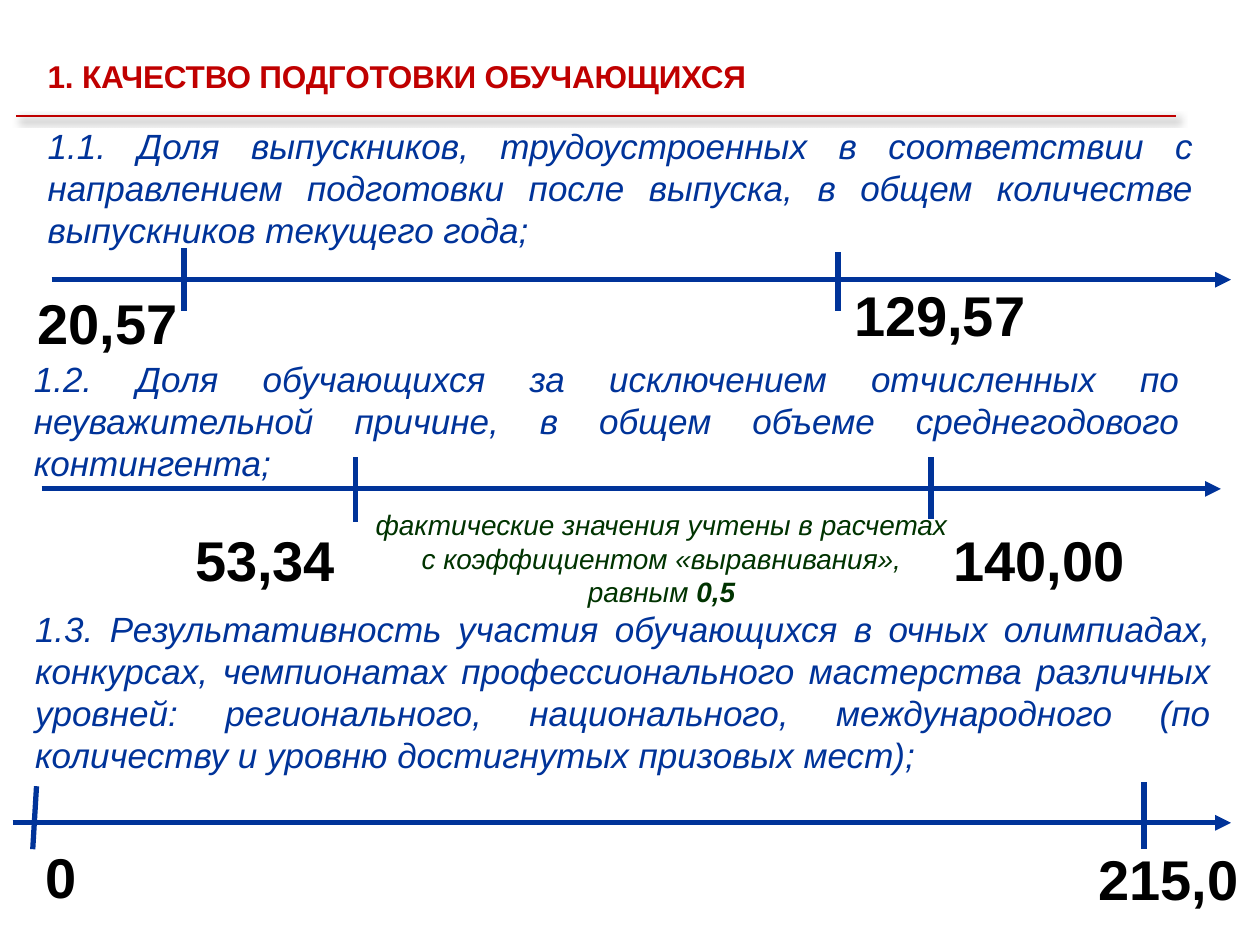
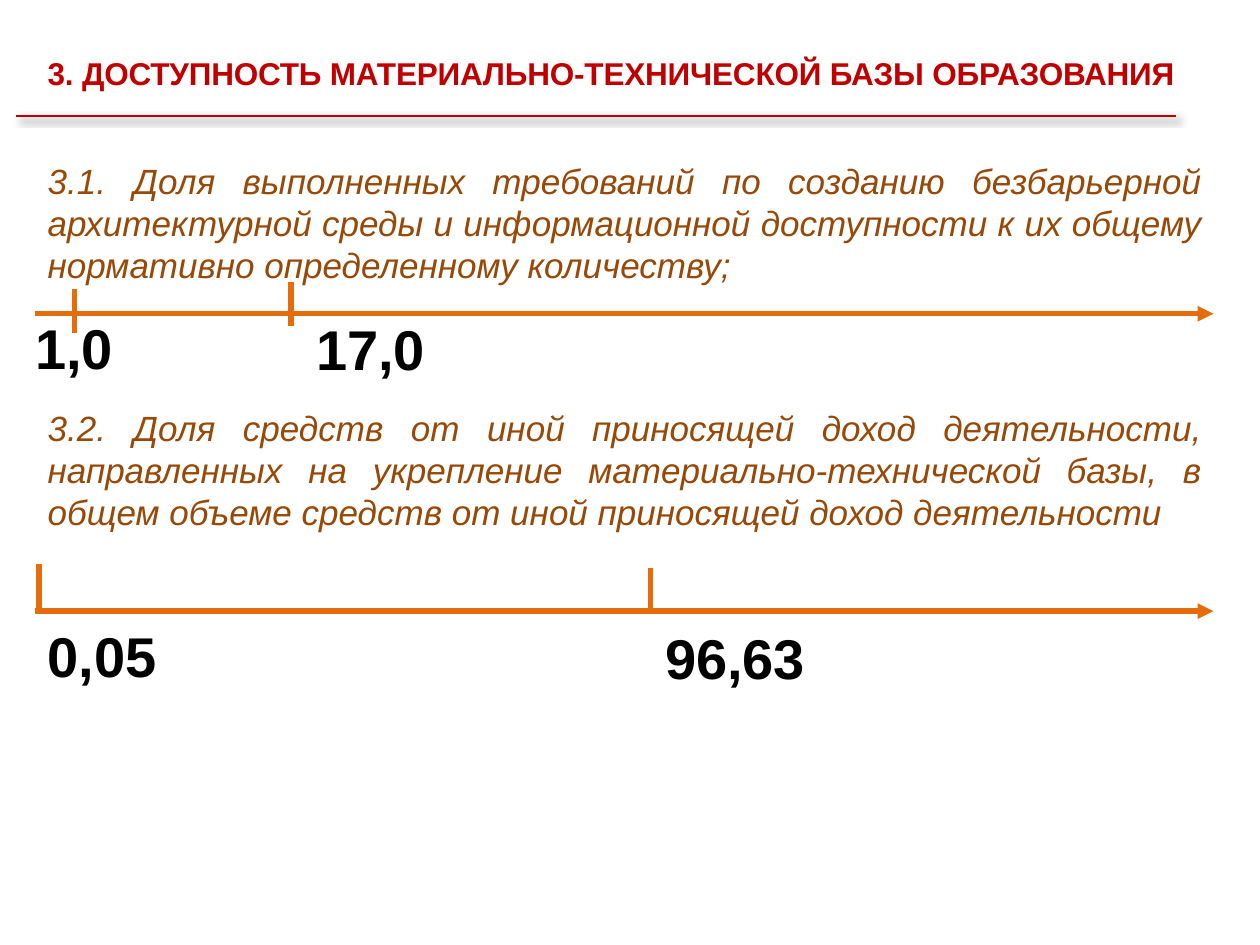
from dataclasses import dataclass

from lxml.etree import SubElement
from pptx import Presentation
from pptx.dml.color import RGBColor
from pptx.enum.shapes import MSO_CONNECTOR
from pptx.enum.text import MSO_AUTO_SIZE, PP_ALIGN
from pptx.oxml.ns import qn
from pptx.util import Inches, Pt

COLORS = {
    "title": "C00000",
    "blue": "003399",
    "brown": "984807",
    "orange": "E46C0A",
    "green": "003300",
    "number": "000000",
    "shadow": "000000",
}
FONT = "Arial"
COLUMNS, ROWS = 100, 75
SLIDE_WIDTH, SLIDE_HEIGHT = Inches(10), Inches(7.5)
STATEMENT_LINE = 3.33
NUMBER_HEIGHT = 6.4
DIGIT_WIDTH, COMMA_WIDTH, TEXT_INSETS = 2.47, 1.24, 2


@dataclass
class Box:
    """A region measured in grid columns and rows."""
    left: float
    top: float
    width: float
    height: float

    def inner(self, left, top, width, height):
        """Return a box placed relative to this one."""
        return Box(self.left + left, self.top + top, width, height)


@dataclass
class Mark:
    """A tick on an axis and the number beside it, relative to the scale."""
    tick: tuple
    number: str
    number_at: tuple
    lean: float = 0


@dataclass
class Scale:
    """A statement above an arrow axis with two marks."""
    box: Box
    statement: str
    indent: float
    width: float
    lines: int
    axis_row: float
    marks: tuple


def across(columns):
    """Convert grid columns to a slide length."""
    return int(SLIDE_WIDTH * columns / COLUMNS)


def down(rows):
    """Convert grid rows to a slide length."""
    return int(SLIDE_HEIGHT * rows / ROWS)


def add_text(page, box, runs, size, color, align=PP_ALIGN.LEFT,
             italic=False, wrap=True, spacing=None):
    """Add a text box from (text, bold) runs."""
    shape = page.shapes.add_textbox(across(box.left), down(box.top),
                                    across(box.width), down(box.height))
    frame = shape.text_frame
    frame.word_wrap = wrap
    frame.auto_size = MSO_AUTO_SIZE.SHAPE_TO_FIT_TEXT
    para = frame.paragraphs[0]
    para.alignment = align
    for text, bold in runs:
        span = para.add_run()
        span.text = text
        span.font.name = FONT
        span.font.size = Pt(size)
        span.font.bold = bold
        span.font.italic = italic
        span.font.color.rgb = RGBColor.from_string(COLORS[color])
        if spacing is not None:
            span._r.get_or_add_rPr().set("spc", str(round(spacing * 100)))


def add_line(page, start, end, color, weight=3, arrow=False):
    """Add a straight line and return its empty effect list."""
    line = page.shapes.add_connector(
        MSO_CONNECTOR.STRAIGHT, across(start[0]), down(start[1]),
        across(end[0]), down(end[1]))
    line.line.color.rgb = RGBColor.from_string(COLORS[color])
    line.line.width = Pt(weight)
    if arrow:
        SubElement(line.line._get_or_add_ln(), qn("a:tailEnd"), type="triangle")
    return SubElement(line._element.spPr, qn("a:effectLst"))


def add_header(page, box, title, wrap=True):
    """Add the red title and the shadowed rule under it."""
    add_text(page, box, [(title, True)], 18, "title", wrap=wrap, spacing=-0.1)
    effects = add_line(page, (1.3, 9.2), (93.3, 9.2), "title", 1.5)
    shadow = SubElement(effects, qn("a:outerShdw"), blurRad=str(Pt(4)),
                        dist=str(Pt(3)), dir=str(45 * 60000), rotWithShape="0")
    tint = SubElement(shadow, qn("a:srgbClr"), val=COLORS["shadow"])
    SubElement(tint, qn("a:alpha"), val="40000")


def add_mark(page, box, mark, color):
    """Add one tick and its number inside a scale's box."""
    column, top, bottom = mark.tick
    add_line(page, (box.left + column + mark.lean, box.top + top),
             (box.left + column, box.top + bottom), color)
    commas = mark.number.count(",")
    width = (TEXT_INSETS + commas * COMMA_WIDTH
             + (len(mark.number) - commas) * DIGIT_WIDTH)
    add_text(page, box.inner(*mark.number_at, width, NUMBER_HEIGHT),
             [(mark.number, True)], 32, "number", wrap=False)


def add_scale(page, scale, text_color, line_color):
    """Add a statement, its arrow axis and its marks."""
    box = scale.box
    height = 1 + scale.lines * STATEMENT_LINE
    add_text(page, box.inner(scale.indent, 0, scale.width, height),
             [(scale.statement, False)], 20, text_color,
             PP_ALIGN.JUSTIFY, italic=True)
    for mark in scale.marks:
        add_mark(page, box, mark, line_color)
    row = box.top + scale.axis_row
    add_line(page, (box.left, row), (box.left + box.width, row),
             line_color, arrow=True)


def add_note(page, box):
    """Add the green remark on the levelling coefficient."""
    add_text(page, box,
             [("фактические значения учтены в расчетах с коэффициентом "
               "«выравнивания», равным ", False), ("0,5", True)],
             16, "green", PP_ALIGN.CENTER, italic=True)


TRAINING_SCALES = (
    Scale(Box(4.1, 9.4, 93.6, 19.4),
          "1.1. Доля выпускников, трудоустроенных в соответствии с "
          "направлением подготовки после выпуска, в общем количестве "
          "выпускников текущего года;",
          -1.3, 92.9, 3, 12.8,
          (Mark((10.5, 10.3, 15.3), "20,57", (-2.1, 13)),
           Mark((62.4, 10.6, 15.3), "129,57", (62.7, 12.4)))),
    Scale(Box(3.3, 27.9, 93.6, 21),
          "1.2. Доля обучающихся за исключением отчисленных по "
          "неуважительной причине, в общем объеме среднегодового "
          "контингента;",
          -1.6, 92.9, 3, 10.9,
          (Mark((24.9, 8.4, 13.5), "53,34", (11.2, 13.3)),
           Mark((70.6, 8.4, 13.3), "140,00", (71.4, 13.3)))),
    Scale(Box(1, 47.7, 96.7, 25.2),
          "1.3. Результативность участия обучающихся в очных олимпиадах, "
          "конкурсах, чемпионатах профессионального мастерства различных "
          "уровней: регионального, национального, международного (по "
          "количеству и уровню достигнутых призовых мест);",
          0.8, 95.3, 4, 17.6,
          (Mark((1.6, 14.7, 19.7), "0", (1.6, 18.7), lean=0.3),
           Mark((89.8, 14.4, 19.7), "215,0", (85.2, 18.8)))),
)
ACCESS_SCALES = (
    Scale(Box(2.8, 12.2, 93.5, 18.7),
          "3.1. Доля выполненных требований по созданию безбарьерной "
          "архитектурной среды и информационной доступности к их общему "
          "нормативно определенному количеству;",
          0, 93.6, 3, 12.7,
          (Mark((3.1, 10.7, 14.2), "1,0", (-1, 12.2)),
           Mark((20.3, 10.2, 13.7), "17,0", (21.3, 12.3)))),
    Scale(Box(2.8, 31.8, 93.5, 23.6),
          "3.2. Доля средств от иной приносящей доход деятельности, "
          "направленных на укрепление материально-технической базы, в "
          "общем объеме средств от иной приносящей доход деятельности",
          0, 93.6, 3, 16.7,
          (Mark((0.3, 13, 16.7), "0,05", (0, 17)),
           Mark((48.8, 13.3, 16.7), "96,63", (49, 17.2)))),
)


def build_training(page):
    """Fill the slide on the quality of training."""
    add_header(page, Box(2.8, 4, 57.9, 4),
               "1. КАЧЕСТВО ПОДГОТОВКИ ОБУЧАЮЩИХСЯ", wrap=False)
    for scale in TRAINING_SCALES:
        add_scale(page, scale, "blue", "blue")
    add_note(page, TRAINING_SCALES[1].box.inner(24.9, 11.9, 48.6, 9.1))


def build_access(page):
    """Fill the slide on access to facilities."""
    add_header(page, Box(2.8, 3.8, 97.2, 4),
               "3. ДОСТУПНОСТЬ МАТЕРИАЛЬНО-ТЕХНИЧЕСКОЙ БАЗЫ ОБРАЗОВАНИЯ")
    for scale in ACCESS_SCALES:
        add_scale(page, scale, "brown", "orange")


def main():
    """Build and save the deck."""
    deck = Presentation()
    deck.slide_width, deck.slide_height = SLIDE_WIDTH, SLIDE_HEIGHT
    for build in (build_training, build_access):
        build(deck.slides.add_slide(deck.slide_layouts[6]))
    deck.save("out.pptx")


if __name__ == "__main__":
    main()
